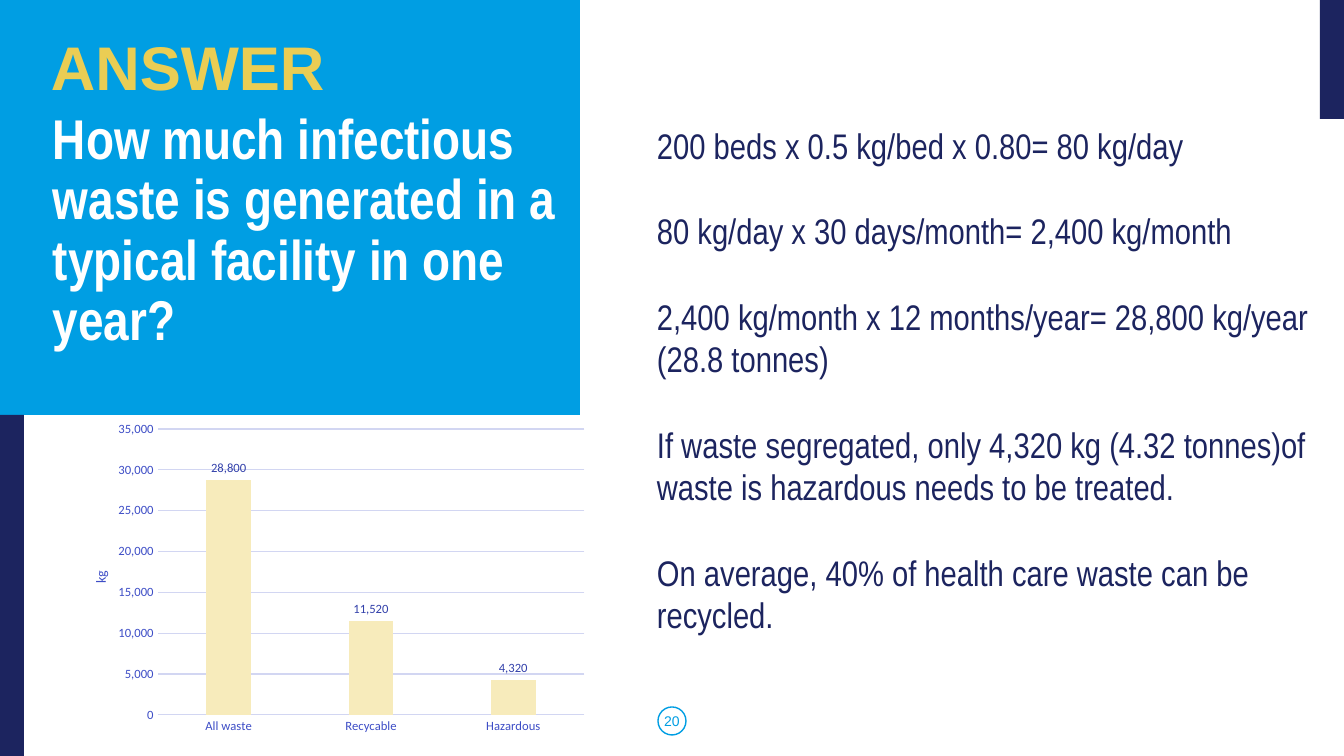
from pptx import Presentation
from pptx.chart.data import CategoryChartData as ChartData
from pptx.dml.color import RGBColor
from pptx.enum.chart import XL_CHART_TYPE as Kind, XL_LABEL_POSITION as Spot
from pptx.enum.chart import XL_TICK_MARK as Tick
from pptx.enum.shapes import MSO_SHAPE as Form
from pptx.enum.text import MSO_ANCHOR as Anchor, PP_ALIGN as Align
from pptx.oxml import parse_xml
from pptx.oxml.ns import nsdecls, qn
from pptx.util import Pt

SCALE = 914400 / 100.8
WIDE, HIGH = 1344, 756

BLUE = RGBColor(0x00, 0x9E, 0xE3)
NAVY = RGBColor(0x1C, 0x24, 0x5F)
GOLD = RGBColor(0xEA, 0xCD, 0x54)
CREAM = RGBColor(0xF7, 0xEB, 0xBB)
WHITE = RGBColor(0xFF, 0xFF, 0xFF)
AXIS = RGBColor(0x3D, 0x4D, 0xC6)
LABEL = RGBColor(0x32, 0x40, 0xAA)
GRID = RGBColor(0xD2, 0xD6, 0xF2)

ANSWERS = [
    "200 beds x 0.5 kg/bed x 0.80= 80 kg/day",
    "80 kg/day x 30 days/month= 2,400 kg/month",
    "2,400 kg/month x 12 months/year= 28,800 kg/year (28.8 tonnes)",
    "If waste segregated, only 4,320 kg (4.32 tonnes)of waste is hazardous needs to be treated.",
    "On average, 40% of health care waste can be recycled.",
]
WASTE = {"All waste": 28800, "Recycable": 11520, "Hazardous": 4320}


def emu(*lengths):
    return [round(n * SCALE) for n in lengths]


def style(font, size, color, face="Calibri", bold=False):
    font.size, font.name, font.bold = Pt(size), face, bold
    font.color.rgb = color


def rule(line):
    line.color.rgb, line.width = GRID, Pt(0.75)


def place(node, before, **share):
    """Pin a chart part at shares of the chart's width and height."""
    for old in node.findall(qn("c:layout")):
        node.remove(old)
    modes = '<c:layoutTarget val="inner"/>' if "w" in share else ""
    modes += '<c:xMode val="edge"/><c:yMode val="edge"/>'
    parts = "".join(f'<c:{key} val="{val}"/>' for key, val in share.items())
    layout = parse_xml(f'<c:layout {nsdecls("c")}><c:manualLayout>{modes}{parts}'
                       "</c:manualLayout></c:layout>")
    node.find(qn(before)).addprevious(layout)


class Page:
    """Holds the slide and its house style."""

    def __init__(self, deck):
        self.shapes = deck.slides.add_slide(deck.slide_layouts[6]).shapes

    def shape(self, form, box, fill=None, line=None):
        item = self.shapes.add_shape(form, *emu(*box))
        item.shadow.inherit = False
        if fill is None:
            item.fill.background()
        else:
            item.fill.solid()
            item.fill.fore_color.rgb = fill
        if line is None:
            item.line.fill.background()
        else:
            item.line.color.rgb, item.line.width = line, Pt(1)

    def text(self, box, lines, size, color, face="Arial", bold=False,
             align=Align.LEFT, anchor=Anchor.TOP, pitch=1.0, gap=0):
        frame = self.shapes.add_textbox(*emu(*box)).text_frame
        frame.word_wrap, frame.vertical_anchor = True, anchor
        frame.text = "\n".join(lines)
        for para in frame.paragraphs:
            para.alignment, para.line_spacing = align, pitch
            para.space_after = Pt(gap)
            style(para.font, size, color, face, bold)

    def chart(self, box, values, unit):
        data = ChartData(number_format="#,##0")
        data.categories = values.keys()
        data.add_series("Series 1", values.values())
        chart = self.shapes.add_chart(Kind.COLUMN_CLUSTERED, *emu(*box), data).chart
        chart.has_title = chart.has_legend = False
        style(chart.font, 10, NAVY)
        self.bars(chart.plots[0])
        self.axes(chart.category_axis, chart.value_axis, unit)
        area = chart.element.find(".//" + qn("c:plotArea"))
        place(area, "c:barChart", x=0.17, y=0.04, w=0.81, h=0.88)

    def bars(self, plot):
        plot.gap_width, plot.overlap, plot.vary_by_categories = 219, -27, False
        fill = plot.series[0].format.fill
        fill.solid()
        fill.fore_color.rgb = CREAM
        plot.has_data_labels = True
        labels = plot.data_labels
        labels.show_value, labels.position = True, Spot.OUTSIDE_END
        labels.number_format, labels.number_format_is_linked = "#,##0", False
        style(labels.font, 9, LABEL)

    def axes(self, names, scale, unit):
        for axis in (names, scale):
            axis.major_tick_mark = axis.minor_tick_mark = Tick.NONE
            style(axis.tick_labels.font, 9, AXIS)
        rule(names.format.line)
        scale.format.line.fill.background()
        scale.has_major_gridlines = True
        rule(scale.major_gridlines.format.line)
        scale.minimum_scale, scale.maximum_scale, scale.major_unit = 0, 35000, 5000
        scale.tick_labels.number_format = "#,##0"
        scale.tick_labels.number_format_is_linked = False
        title = scale.axis_title
        title.text_frame.text = unit
        style(title.text_frame.paragraphs[0].font, 10, AXIS)
        place(title.element if hasattr(title, "element") else title._element,
              "c:overlay", x=0.04, y=0.47)


def main():
    deck = Presentation()
    deck.slide_width, deck.slide_height = emu(WIDE, HIGH)
    page = Page(deck)
    for box, fill in [((0, 0, 580, 415), BLUE), ((0, 415, 24, 341), NAVY),
                      ((1320, 0, 24, 119), NAVY)]:
        page.shape(Form.RECTANGLE, box, fill)
    page.shape(Form.OVAL, (658, 707, 28, 28), line=BLUE)
    page.text((43, 106, 535, 224),
              ["How much infectious waste is generated in a typical facility in one year?"],
              40, WHITE, "Arial Narrow", bold=True, pitch=0.9)
    page.text((41, 32, 454, 79), ["ANSWER"], 44, GOLD, bold=True, pitch=0.9)
    page.text((0, 701, WIDE, 40), ["20"], 10, BLUE,
              align=Align.CENTER, anchor=Anchor.MIDDLE)
    page.text((647, 119, 697, 527), ANSWERS, 25.4, NAVY, "Arial Narrow", gap=30.5)
    page.chart((68, 416, 527, 325), WASTE, "kg")
    deck.save("out.pptx")


if __name__ == "__main__":
    main()
